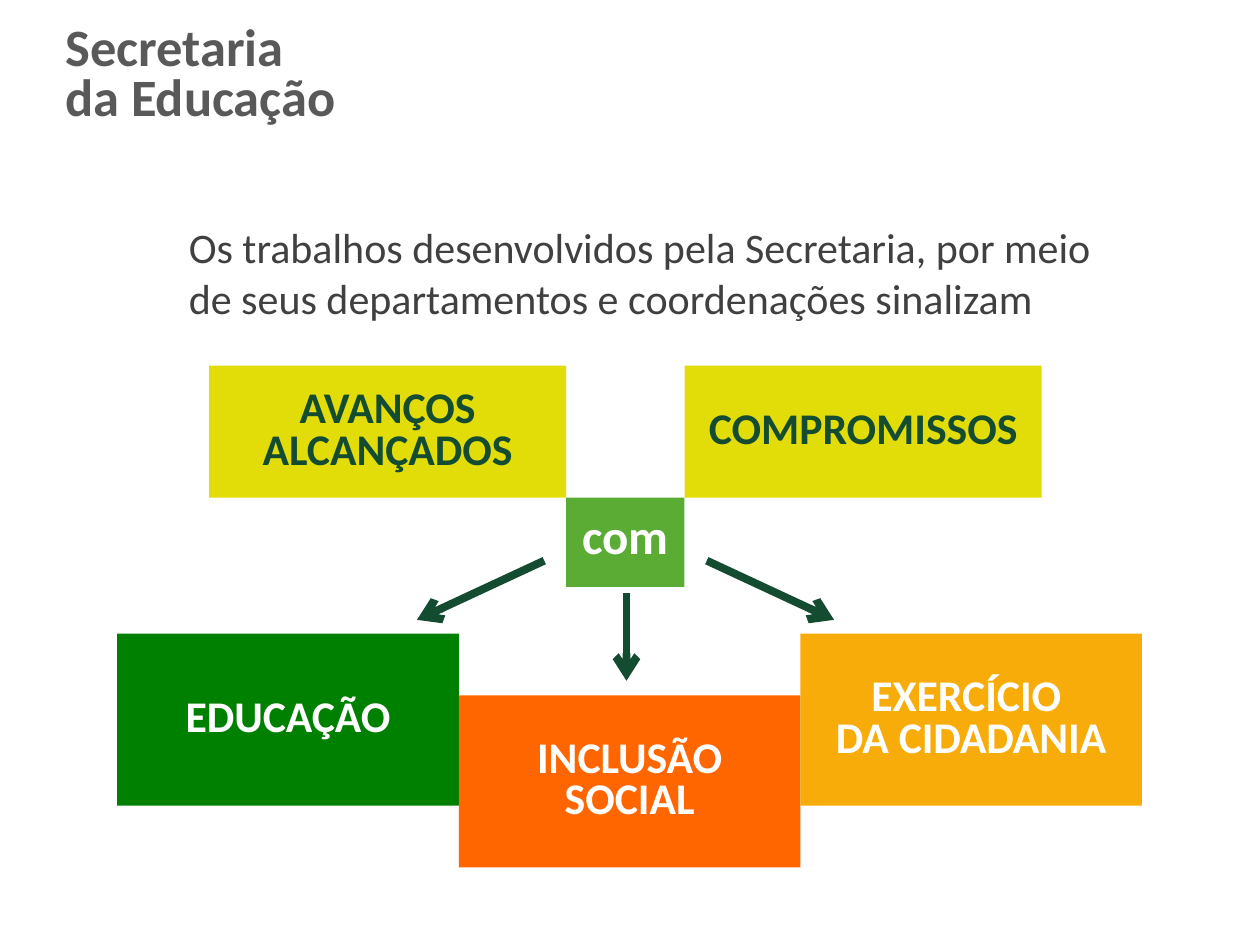
from lxml import etree
from pptx import Presentation
from pptx.dml.color import RGBColor
from pptx.enum.shapes import MSO_CONNECTOR, MSO_SHAPE
from pptx.enum.text import MSO_ANCHOR, PP_ALIGN
from pptx.oxml.ns import qn
from pptx.util import Pt

RECT, STRAIGHT = MSO_SHAPE.RECTANGLE, MSO_CONNECTOR.STRAIGHT
TOP, MIDDLE = MSO_ANCHOR.TOP, MSO_ANCHOR.MIDDLE
LEFT, CENTER = PP_ALIGN.LEFT, PP_ALIGN.CENTER

FONT = "Calibri"
GRAY = RGBColor(0x59, 0x59, 0x59)
DARK_GRAY = RGBColor(0x40, 0x40, 0x40)
DARK_GREEN = RGBColor(0x13, 0x4C, 0x30)
WHITE = RGBColor(0xFF, 0xFF, 0xFF)
YELLOW = RGBColor(0xE2, 0xDD, 0x09)
LIGHT_GREEN = RGBColor(0x5B, 0xAC, 0x35)
GREEN = RGBColor(0x00, 0x80, 0x00)
ORANGE = RGBColor(0xFF, 0x66, 0x00)
AMBER = RGBColor(0xF8, 0xAC, 0x09)

# Content
TITLE = ["Secretaria\vda Educação"]
INTRO = ["Os trabalhos desenvolvidos pela Secretaria, por meio "
         "de seus departamentos e coordenações sinalizam"]
RESULTS = [["AVANÇOS ALCANÇADOS"], ["COMPROMISSOS"]]
LINK = ["com"]
GOALS = [  # text, fill, drop below the row's top
    (["EDUCAÇÃO"], GREEN, 0),
    (["INCLUSÃO SOCIAL"], ORANGE, 35.3),
    (["EXERCÍCIO ", "DA CIDADANIA"], AMBER, 0),
]

# Layout, in points
RESULT_X, RESULT_Y, RESULT_W, RESULT_H = 119.5, 209, 204, 75.4
LINK_W, LINK_H = 67.7, 51
GOAL_X, GOAL_Y, GOAL_W, GOAL_H = 67, 362, 195.2, 98.4
ARROWS = [(311, 320.4, 238.3, 354.2),
          (403.9, 320.4, 476.6, 354.2),
          (358, 339, 358, 389)]


def write(tf, lines, size, color, bold=True, align=CENTER, spacing=0.8, anchor=MIDDLE):
    tf.word_wrap = True
    tf.vertical_anchor = anchor
    for i, line in enumerate(lines):
        p = tf.paragraphs[0] if i == 0 else tf.add_paragraph()
        p.text = line
        p.alignment = align
        p.line_spacing = spacing
        p.font.name, p.font.size, p.font.bold = FONT, Pt(size), bold
        p.font.color.rgb = color


def add_text(s, box, lines, *args, **kwargs):
    tb = s.shapes.add_textbox(*map(Pt, box))
    write(tb.text_frame, lines, *args, **kwargs)


def add_block(s, box, fill, lines, size, color, **kwargs):
    sp = s.shapes.add_shape(RECT, *map(Pt, box))
    sp.shadow.inherit = False
    sp.fill.solid()
    sp.fill.fore_color.rgb = fill
    sp.line.fill.background()
    write(sp.text_frame, lines, size, color, **kwargs)
    return sp


def add_arrow(s, ends):
    c = s.shapes.add_connector(STRAIGHT, *map(Pt, ends))
    c.line.color.rgb = DARK_GREEN
    c.line.width = Pt(4.5)
    etree.SubElement(c.line._get_or_add_ln(), qn("a:tailEnd"), type="arrow")
    etree.SubElement(c._element.spPr, qn("a:effectLst"))


prs = Presentation()
prs.slide_width, prs.slide_height = Pt(720), Pt(540)
s = prs.slides.add_slide(prs.slide_layouts[6])

# Title and introduction
add_text(s, (30.2, 7.9, 222.5, 71.3), TITLE, 30, GRAY, align=LEFT)
add_text(s, (100.8, 123.1, 545.8, 65.5), INTRO, 24, DARK_GRAY,
         bold=False, align=LEFT, spacing=1, anchor=TOP)

# Results, with the link block fitting between them
for i, lines in enumerate(RESULTS):
    x = RESULT_X + i * (RESULT_W + LINK_W)
    add_block(s, (x, RESULT_Y, RESULT_W, RESULT_H), YELLOW, lines, 25, DARK_GREEN)
link = add_block(s, (RESULT_X + RESULT_W, RESULT_Y + RESULT_H, LINK_W, LINK_H),
                 LIGHT_GREEN, LINK, 28, WHITE, spacing=1)
link.text_frame.margin_bottom = Pt(12)

# Goals, side by side
for i, (lines, fill, drop) in enumerate(GOALS):
    add_block(s, (GOAL_X + i * GOAL_W, GOAL_Y + drop, GOAL_W, GOAL_H),
              fill, lines, 25, WHITE)

# Arrows from the link to the goals
for ends in ARROWS:
    add_arrow(s, ends)

prs.save("out.pptx")
